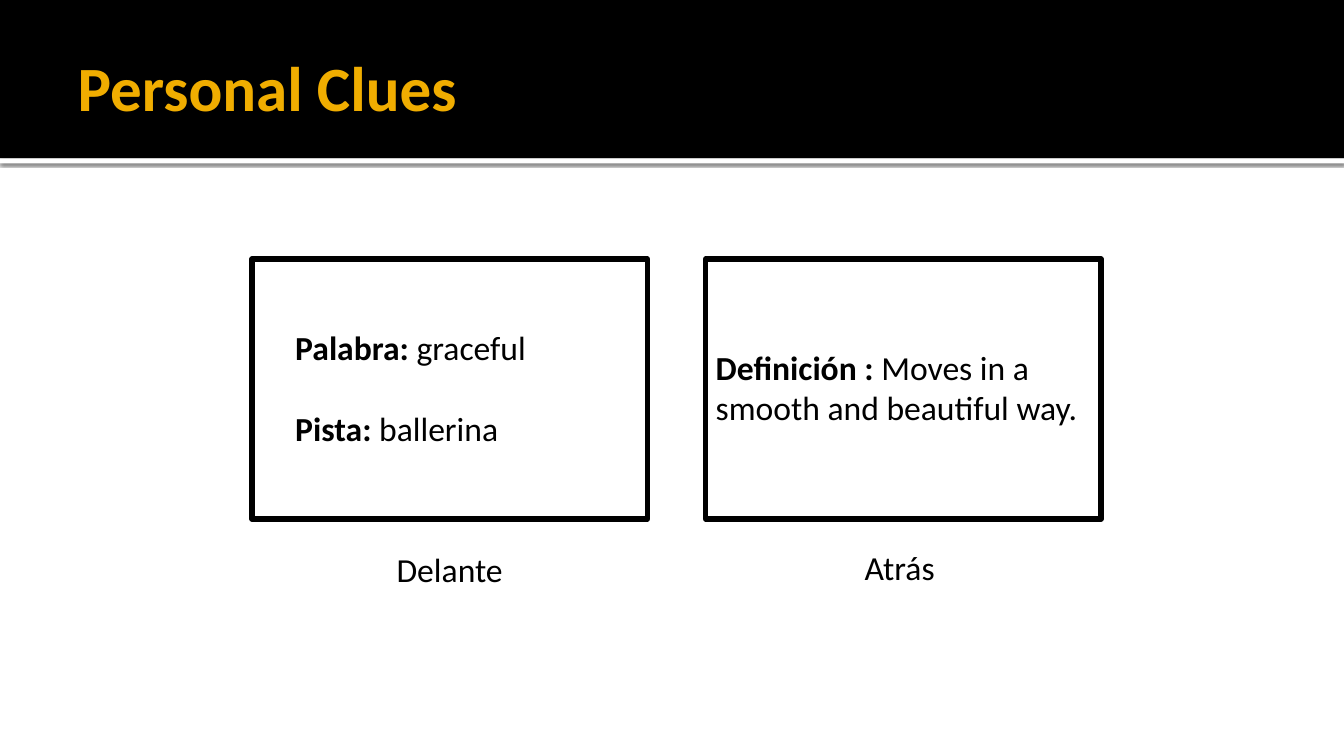
from dataclasses import dataclass

from lxml import etree
from pptx import Presentation
from pptx.dml.color import RGBColor
from pptx.enum.shapes import MSO_SHAPE
from pptx.enum.text import MSO_ANCHOR, MSO_AUTO_SIZE, PP_ALIGN
from pptx.oxml import parse_xml
from pptx.oxml.ns import nsdecls
from pptx.shapes.autoshape import Shape
from pptx.slide import Slide
from pptx.text.text import TextFrame
from pptx.util import Inches, Pt

RECT = MSO_SHAPE.RECTANGLE
LEFT, CENTER = PP_ALIGN.LEFT, PP_ALIGN.CENTER
MIDDLE = MSO_ANCHOR.MIDDLE
NO_FIT = MSO_AUTO_SIZE.NONE

Area = tuple[float, float, float, float]
Line = list[tuple[str, bool]]


@dataclass(frozen=True)
class Theme:
    font: str = "Calibri"
    black: RGBColor = RGBColor(0, 0, 0)
    white: RGBColor = RGBColor(255, 255, 255)
    gold: RGBColor = RGBColor(0xF0, 0xAD, 0x00)
    title: float = 45
    body: float = 24
    gap: float = 29
    border: float = 3.78


@dataclass(frozen=True)
class Card:
    left: float
    text_area: Area
    lines: list[Line]
    label: str
    label_area: Area


THEME = Theme()
CARD_TOP, CARD_WIDTH, CARD_HEIGHT = 2.57, 3.92, 2.58
CARDS = [
    Card(2.5, (2.83, 3.19, 3.33, 1.31),
         [[("Palabra: ", True), ("graceful", False)],
          [("Pista: ", True), ("ballerina", False)]],
         "Delante", (3.42, 5.4, 2.08, 0.5)),
    Card(7, (7, 3.39, 3.92, 0.91),
         [[("Definición : ", True),
           ("Moves in a smooth and beautiful way.", False)]],
         "Atrás ", (7.92, 5.38, 2.08, 0.5)),
]


def add_rect(slide: Slide, area: Area) -> Shape:
    rect = slide.shapes.add_shape(RECT, *map(Inches, area))
    rect.shadow.inherit = False
    return rect


def add_band(slide: Slide, area: Area, color: RGBColor) -> Shape:
    band = add_rect(slide, area)
    band.fill.solid()
    band.fill.fore_color.rgb = color
    band.line.fill.background()
    return band


def add_shadow(shape: Shape) -> None:
    """Cast a soft shadow straight down."""
    effects: etree.ElementBase = shape.element.spPr.find(
        etree.QName(shape.element.spPr.nsmap["a"], "effectLst"))
    effects.append(parse_xml(
        f'<a:outerShdw {nsdecls("a")} blurRad="{Pt(2.5)}" dist="{Pt(0.8)}" '
        'dir="5400000" algn="tl" rotWithShape="0"><a:srgbClr val="000000">'
        '<a:alpha val="60000"/></a:srgbClr></a:outerShdw>'))


def write(frame: TextFrame, lines: list[Line], size: float,
          color: RGBColor, align: PP_ALIGN = LEFT) -> None:
    frame.word_wrap = True
    for i, line in enumerate(lines):
        para = frame.add_paragraph() if i else frame.paragraphs[0]
        para.alignment = align
        para.space_before = Pt(THEME.gap if i else 0)
        for text, bold in line:
            run = para.add_run()
            run.text = text
            run.font.name = THEME.font
            run.font.size = Pt(size)
            run.font.bold = bold
            run.font.color.rgb = color


def add_text(slide: Slide, area: Area, lines: list[Line],
             align: PP_ALIGN = LEFT) -> None:
    box = slide.shapes.add_textbox(*map(Inches, area))
    write(box.text_frame, lines, THEME.body, THEME.black, align)


def add_title(slide: Slide, text: str) -> None:
    title = slide.shapes.title
    title.left, title.top, title.width, title.height = map(
        Inches, (0.67, 0.17, 12, 1.37))
    frame = title.text_frame
    frame.auto_size = NO_FIT
    frame.vertical_anchor = MIDDLE
    frame.margin_left = Inches(0.1)
    frame.margin_right = frame.margin_top = frame.margin_bottom = Inches(0.05)
    write(frame, [[(text, True)]], THEME.title, THEME.gold)
    # Bring the title in front of the header band.
    slide.shapes.element.append(title.element)


def add_card(slide: Slide, card: Card) -> None:
    frame = add_rect(slide, (card.left, CARD_TOP, CARD_WIDTH, CARD_HEIGHT))
    frame.fill.background()
    frame.line.color.rgb = THEME.black
    frame.line.width = Pt(THEME.border)
    add_text(slide, card.text_area, card.lines)
    add_text(slide, card.label_area, [[(card.label, False)]], CENTER)


def main() -> None:
    deck = Presentation()
    deck.slide_width, deck.slide_height = Inches(13.33), Inches(7.5)
    slide = deck.slides.add_slide(deck.slide_layouts[5])
    slide.background.fill.solid()
    slide.background.fill.fore_color.rgb = THEME.white
    add_shadow(add_band(slide, (0, 1.57, 13.33, 0.05), THEME.white))
    add_band(slide, (0, 0, 13.33, 1.57), THEME.black)
    add_title(slide, "Personal Clues")
    for card in CARDS:
        add_card(slide, card)
    deck.save("out.pptx")


if __name__ == "__main__":
    main()
